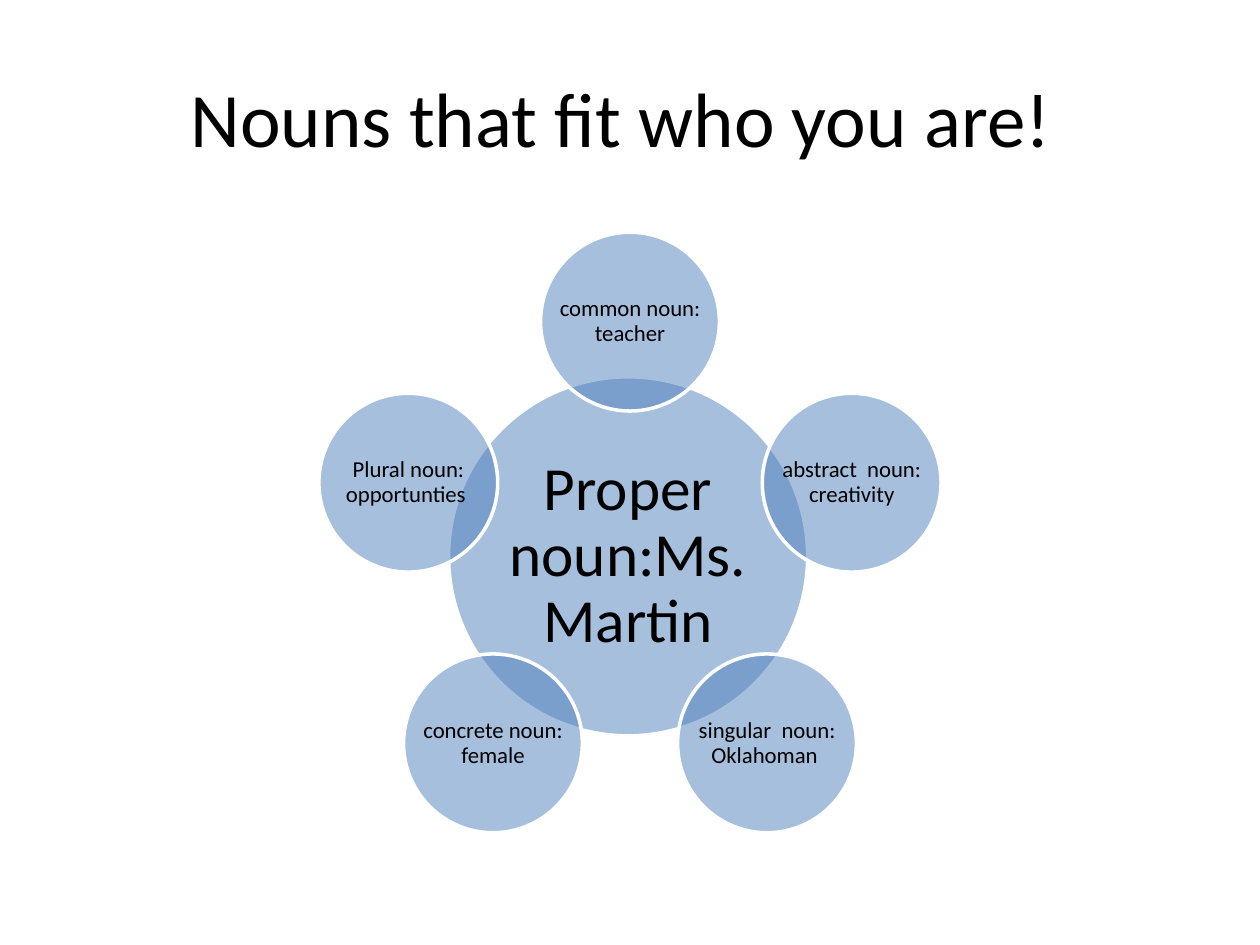
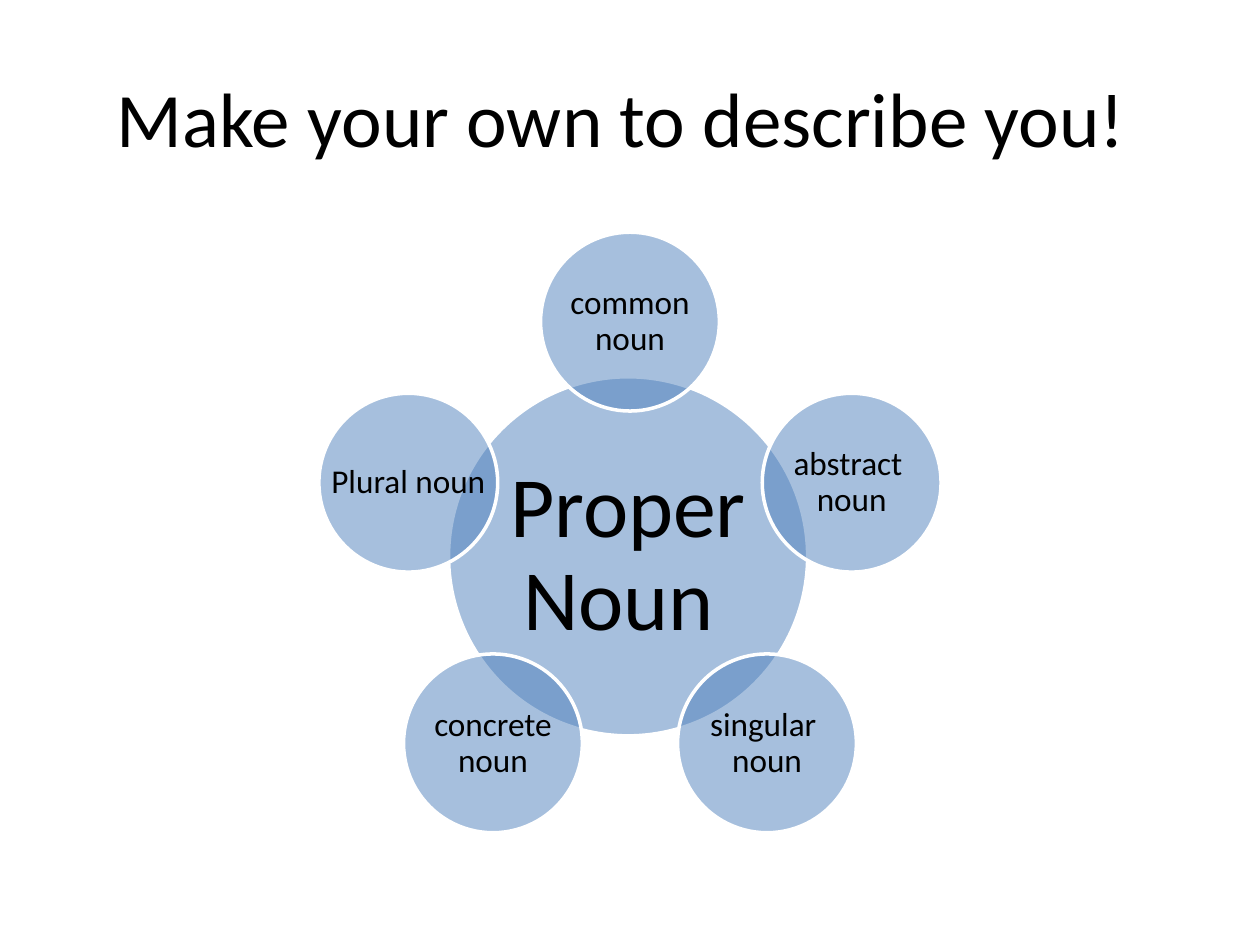
"""Build two slides of noun circles: a worked example and a template to fill in."""
import dataclasses
import math

import lxml.etree
import pptx
import pptx.dml.color
import pptx.enum.shapes
import pptx.enum.text
import pptx.oxml.ns
import pptx.util

Pt = pptx.util.Pt


@dataclasses.dataclass(frozen=True)
class Theme:
    font: str = "Calibri"
    ink: pptx.dml.color.RGBColor = pptx.dml.color.RGBColor(0x00, 0x00, 0x00)
    bubble: pptx.dml.color.RGBColor = pptx.dml.color.RGBColor(0x4F, 0x81, 0xBD)
    outline: pptx.dml.color.RGBColor = pptx.dml.color.RGBColor(0xFF, 0xFF, 0xFF)
    opacity: int = 50
    title_size: int = 44


theme = Theme()


def write_text(shape, text, size):
    frame = shape.text_frame
    frame.word_wrap = True
    frame.vertical_anchor = pptx.enum.text.MSO_ANCHOR.MIDDLE
    paragraph = frame.paragraphs[0]
    paragraph.alignment = pptx.enum.text.PP_ALIGN.CENTER
    run = paragraph.add_run()
    run.text = text
    run.font.name = theme.font
    run.font.size = Pt(size)
    run.font.color.rgb = theme.ink
    return frame


def add_bubble(slide, center_x, center_y, diameter, text, size, inset):
    box = [Pt(value) for value in
           (center_x - diameter / 2, center_y - diameter / 2, diameter, diameter)]
    circle = slide.shapes.add_shape(pptx.enum.shapes.MSO_SHAPE.OVAL, *box)
    circle.shadow.inherit = False
    circle.fill.solid()
    circle.fill.fore_color.rgb = theme.bubble
    color = circle.fill._xPr.find(".//" + pptx.oxml.ns.qn("a:srgbClr"))
    alpha = lxml.etree.SubElement(color, pptx.oxml.ns.qn("a:alpha"))
    alpha.set("val", str(theme.opacity * 1000))
    circle.line.color.rgb = theme.outline
    circle.line.width = Pt(2)

    frame = write_text(slide.shapes.add_textbox(*box), text, size)
    frame.margin_left = frame.margin_right = Pt(inset)
    frame.margin_top = frame.margin_bottom = Pt(inset)
    frame.paragraphs[0].line_spacing = 0.9


hub_x, hub_y, hub_diameter = 358.9, 317.9, 205.2
ring_x, ring_y, ring_radius, satellite_diameter = 360, 317, 133.2, 102.2

pages = [
    {"title": "Nouns that fit who you are! ",
     "hub": ("Proper noun:Ms. Martin", 35, 3.6),
     "satellites": ["common noun: teacher", "abstract  noun: creativity",
                    "singular  noun: Oklahoman ", "concrete noun: female",
                    "Plural noun: opportunties "],
     "satellite_size": 13, "satellite_inset": 1.4},
    {"title": "Make your own to describe you! ",
     "hub": ("Proper Noun ", 49, 5),
     "satellites": ["common noun", "abstract  noun", "singular  noun",
                    "concrete noun", "Plural noun"],
     "satellite_size": 19, "satellite_inset": 2.2},
]

presentation = pptx.Presentation()
presentation.slide_width = Pt(720)
presentation.slide_height = Pt(540)

for page in pages:
    slide = presentation.slides.add_slide(presentation.slide_layouts[5])
    title = slide.shapes.title
    title.left, title.top, title.width, title.height = Pt(36), Pt(21.6), Pt(648), Pt(90)
    write_text(title, page["title"], theme.title_size)

    add_bubble(slide, hub_x, hub_y, hub_diameter, *page["hub"])
    for index, text in enumerate(page["satellites"]):
        angle = math.tau * index / len(page["satellites"])
        add_bubble(slide, ring_x + ring_radius * math.sin(angle),
                   ring_y - ring_radius * math.cos(angle), satellite_diameter,
                   text, page["satellite_size"], page["satellite_inset"])

presentation.save("out.pptx")
